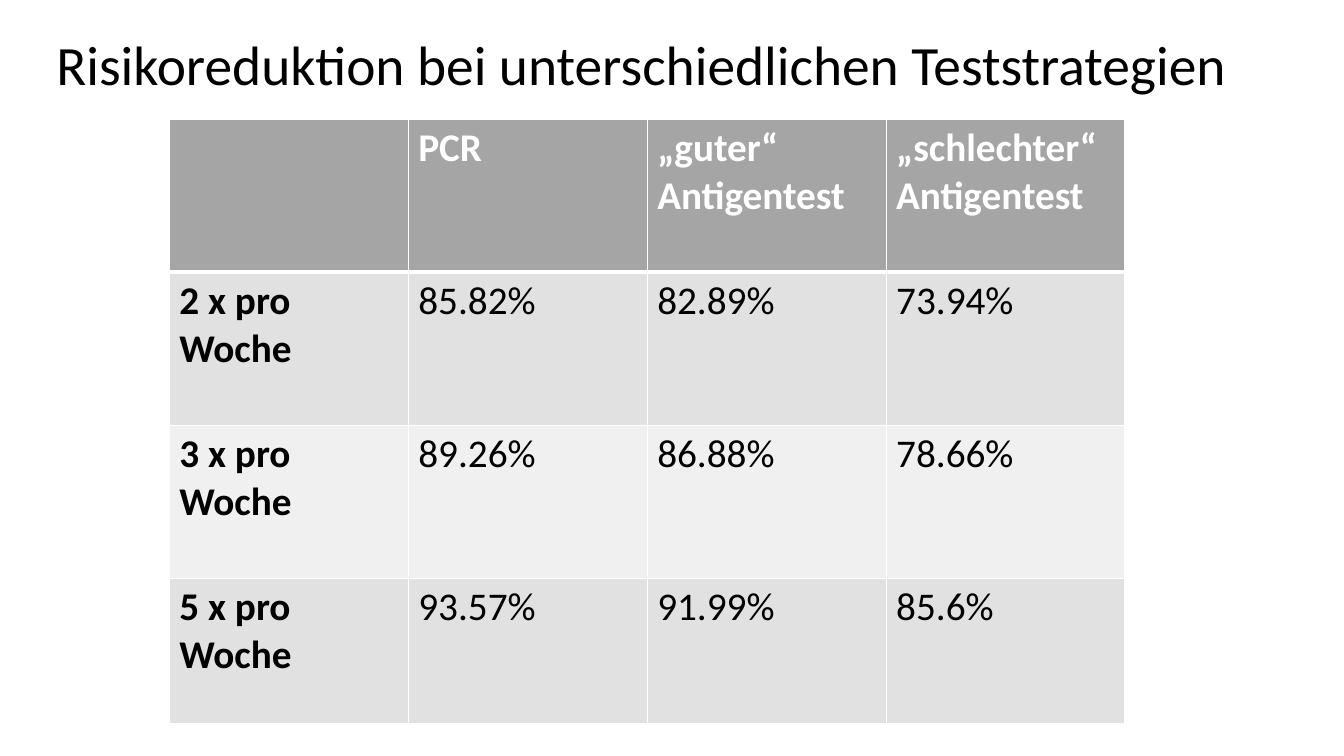
from lxml import etree
from pptx import Presentation
from pptx.dml.color import RGBColor
from pptx.enum import text
from pptx.oxml import ns
from pptx.util import Inches, Pt

COLORS = {
    "black": "000000",
    "white": "FFFFFF",
    "header": "A5A5A5",
    "band_dark": "E1E1E1",
    "band_light": "F0F0F0",
}
FONT = "Calibri"
TITLE = "Risikoreduktion bei unterschiedlichen Teststrategien"
RISK_REDUCTION = [
    ["", "PCR", "„guter“ Antigentest", "„schlechter“ Antigentest"],
    ["2 x pro Woche", "85.82%", "82.89%", "73.94%"],
    ["3 x pro Woche", "89.26%", "86.88%", "78.66%"],
    ["5 x pro Woche", "93.57%", "91.99%", "85.6%"],
]
COLUMN_WIDTH = 2.37
ROW_HEIGHTS = [1.52, 1.52, 1.52, 1.44]


def write(frame, wording, size, color="black", bold=False, line_spacing=None):
    para = frame.paragraphs[0]
    para.line_spacing = line_spacing
    span = para.add_run()
    span.text = wording
    span.font.name = FONT
    span.font.size = Pt(size)
    span.font.bold = bold
    span.font.color.rgb = RGBColor.from_string(COLORS[color])


def add_title(page, wording):
    box = page.shapes.add_textbox(Inches(0.46), Inches(0.14), Inches(12.42), Inches(1.05))
    box.text_frame.word_wrap = True
    box.text_frame.vertical_anchor = text.MSO_ANCHOR.MIDDLE
    write(box.text_frame, wording, 39.6, line_spacing=0.9)


def set_borders(cell, widths):
    """Draw white cell edges; widths maps each side's tag to points."""
    properties = cell._tc.get_or_add_tcPr()
    for position, (side, width) in enumerate(widths.items()):
        line = etree.Element(ns.qn(f"a:{side}"), w=str(Pt(width)))
        fill = etree.SubElement(line, ns.qn("a:solidFill"))
        etree.SubElement(fill, ns.qn("a:srgbClr"), val=COLORS["white"])
        properties.insert(position, line)


def fill_cell(cell, wording, row, column):
    is_header = row == 0
    band = "band_dark" if row % 2 else "band_light"
    cell.fill.solid()
    cell.fill.fore_color.rgb = RGBColor.from_string(COLORS["header" if is_header else band])
    set_borders(cell, {
        "lnL": 1,
        "lnR": 1,
        "lnT": 3 if row == 1 else 1,
        "lnB": 3 if is_header else 1,
    })
    if wording:
        write(cell.text_frame, wording, 28, "white" if is_header else "black",
              bold=is_header or column == 0)


def add_risk_table(page, rows):
    column_count = len(rows[0])
    table = page.shapes.add_table(
        len(rows), column_count, Inches(1.68), Inches(1.18),
        Inches(COLUMN_WIDTH * column_count), Inches(sum(ROW_HEIGHTS))).table
    for column in table.columns:
        column.width = Inches(COLUMN_WIDTH)
    for row, (height, wordings) in enumerate(zip(ROW_HEIGHTS, rows)):
        table.rows[row].height = Inches(height)
        for column, wording in enumerate(wordings):
            fill_cell(table.cell(row, column), wording, row, column)


def main():
    deck = Presentation()
    deck.slide_width, deck.slide_height = Inches(13.33), Inches(7.5)
    page = deck.slides.add_slide(deck.slide_layouts[6])
    add_title(page, TITLE)
    add_risk_table(page, RISK_REDUCTION)
    deck.save("out.pptx")


if __name__ == "__main__":
    main()
